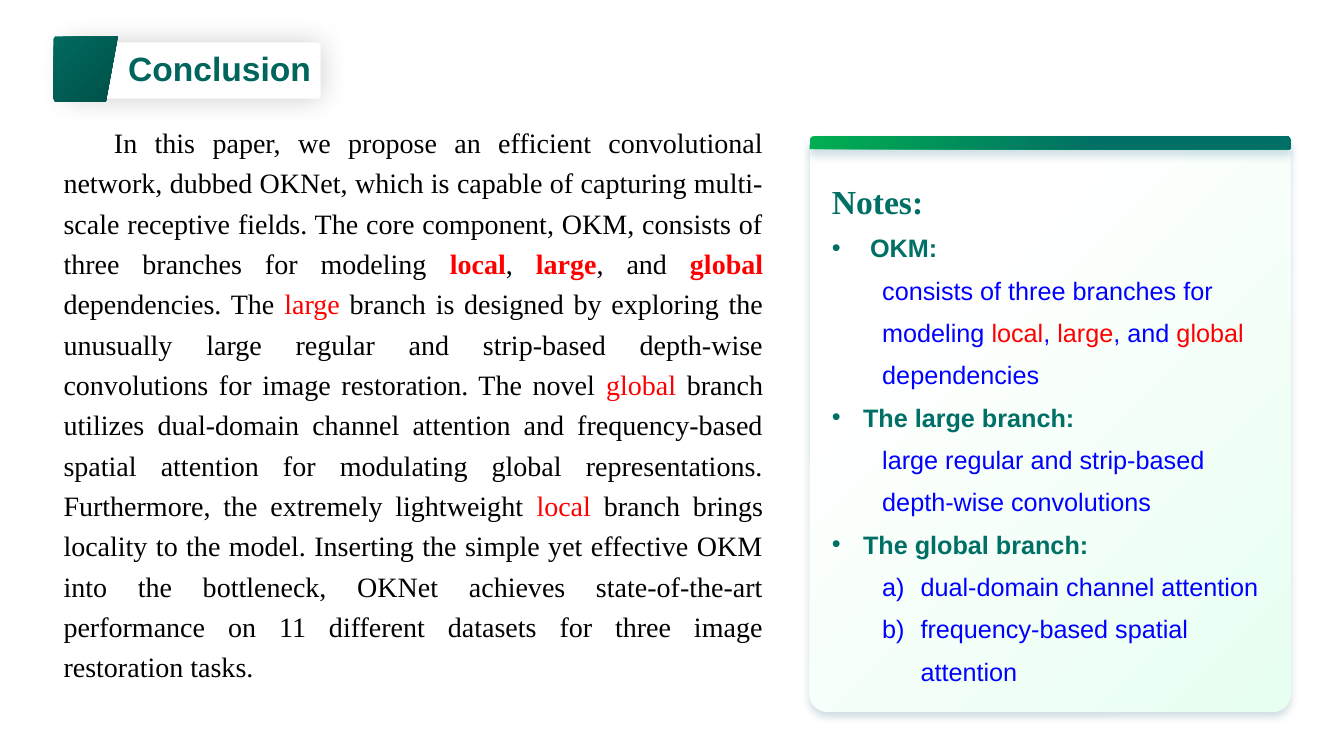
from lxml import etree
from pptx import Presentation
from pptx import util as u
from pptx.dml.color import RGBColor
from pptx.enum import shapes, text
from pptx.oxml.ns import qn

COLORS = {
    "black": "000000", "white": "FFFFFF", "red": "FF0000", "blue": "0000FF",
    "title": "00655C", "teal": "006F66", "tab": "006A60", "tab_dark": "005048",
    "green": "00B050", "mint": "E7FFF1",
    "card_shadow": "0F526C", "bar_shadow": "116584",
}
SERIF, SANS = "Times New Roman", "Arial"

# Content: each span is (text, color, bold)
TITLE = "Conclusion"
SUMMARY = [
    ("In this paper, we propose an efficient convolutional network, dubbed OKNet, "
     "which is capable of capturing multi-scale receptive fields. The core component, "
     "OKM, consists of three branches for modeling ", "black", False),
    ("local", "red", True), (", ", "black", False),
    ("large", "red", True), (", and ", "black", False),
    ("global", "red", True), (" dependencies. The ", "black", False),
    ("large", "red", False),
    (" branch is designed by exploring the unusually large regular and strip-based "
     "depth-wise convolutions for image restoration. The novel ", "black", False),
    ("global", "red", False),
    (" branch utilizes dual-domain channel attention and frequency-based spatial "
     "attention for modulating global representations. Furthermore, the extremely "
     "lightweight ", "black", False),
    ("local", "red", False),
    (" branch brings locality to the model. Inserting the simple yet effective OKM into "
     "the bottleneck, OKNet achieves state-of-the-art performance on 11 different "
     "datasets for three image restoration tasks.", "black", False),
]
# Notes: (kind, left margin, spans)
NOTES = [
    ("heading", 0, [("Notes:", "teal", True)]),
    ("bullet", 0.38, [("OKM:", "teal", True)]),
    ("detail", 0.5, [
        ("consists of three branches for modeling ", "blue", False),
        ("local", "red", False), (", ", "blue", False),
        ("large", "red", False), (", and ", "blue", False),
        ("global", "red", False), (" dependencies", "blue", False)]),
    ("bullet", 0.31, [("The large branch:", "teal", True)]),
    ("detail", 0.5, [
        ("large regular and strip-based depth-wise convolutions", "blue", False)]),
    ("bullet", 0.31, [("The global branch:", "teal", True)]),
    ("letter", 0.88, [("dual-domain channel attention", "blue", False)]),
    ("letter", 0.88, [("frequency-based spatial attention", "blue", False)]),
]
# Kind: (level, hanging indent, bullet tag, bullet attributes)
NOTE_KINDS = {
    "heading": (0, 0, "a:buNone", {}),
    "bullet": (0, -0.31, "a:buChar", {"char": "•"}),
    "detail": (1, 0, "a:buNone", {}),
    "letter": (2, -0.38, "a:buAutoNum", {"type": "alphaLcParenR"}),
}

# Geometry in inches
CARD_LEFT, CARD_TOP, CARD_WIDTH = 8.03, 1.35, 4.77
TAB_OUTLINE = [(0.55, 0.36), (1.17, 0.36), (1.05, 1.01), (0.55, 1.01),
               (0.54, 1.0), (0.53, 0.97), (0.53, 0.39), (0.54, 0.37)]


def rgb(name):
    return RGBColor.from_string(COLORS[name])


def paint(shape, stops):
    """Fill with one color name or with two (percent, color name) gradient stops."""
    shape.line.fill.background()
    shape.shadow.inherit = False
    if isinstance(stops, str):
        shape.fill.solid()
        shape.fill.fore_color.rgb = rgb(stops)
        return
    shape.fill.gradient()
    shape.fill.gradient_angle = 315
    for stop, (percent, name) in zip(shape.fill.gradient_stops, stops):
        stop.position = percent / 100
        stop.color.rgb = rgb(name)


def add_shadow(shape, name, blur, distance, degrees):
    effects = shape.element.spPr.find(qn("a:effectLst"))
    shadow = etree.SubElement(
        effects, qn("a:outerShdw"), blurRad=str(u.Pt(blur)), dist=str(u.Pt(distance)),
        dir=str(degrees * 60000), algn="ctr", rotWithShape="0")
    color = etree.SubElement(shadow, qn("a:srgbClr"), val=COLORS[name])
    etree.SubElement(color, qn("a:alpha"), val="20000")


def add_panel(page, kind, place, adjust, stops, shadow):
    shape = page.shapes.add_shape(kind, *map(u.Inches, place))
    shape.adjustments[0] = adjust
    paint(shape, stops)
    add_shadow(shape, *shadow)


def place_text(box, place):
    """Move a placeholder and bring it in front of the panels."""
    box.left, box.top, box.width, box.height = map(u.Inches, place)
    box.element.getparent().append(box.element)
    settings = {"word_wrap": True, "auto_size": text.MSO_AUTO_SIZE.NONE,
                "vertical_anchor": text.MSO_ANCHOR.TOP}
    for key, value in settings.items():
        setattr(box.text_frame, key, value)
    return box.text_frame


def write(para, spans, font, size, spacing, align, margin=0, indent=0,
          bullet="a:buNone", attributes=None):
    settings = {"line_spacing": spacing, "alignment": align,
                "space_before": u.Pt(0), "space_after": u.Pt(0)}
    for key, value in settings.items():
        setattr(para, key, value)
    props = para._p.get_or_add_pPr()
    props.set("marL", str(u.Inches(margin)))
    props.set("indent", str(u.Inches(indent)))
    etree.SubElement(props, qn(bullet), attributes or {})
    for words, color, bold in spans:
        span = para.add_run()
        span.text = words
        for key, value in {"name": font, "size": u.Pt(size), "bold": bold}.items():
            setattr(span.font, key, value)
        span.font.color.rgb = rgb(color)


def main():
    deck = Presentation()
    deck.slide_width, deck.slide_height = u.Inches(13.33), u.Inches(7.5)
    page = deck.slides.add_slide(deck.slide_layouts[3])
    title, summary, notes = list(page.placeholders)[:3]
    preset = shapes.MSO_SHAPE

    # Title plate and slanted tab
    add_panel(page, preset.ROUNDED_RECTANGLE, (0.66, 0.42, 2.52, 0.56), 0.057,
              "white", ("black", 20, 0, 0))
    points = [(u.Inches(x), u.Inches(y)) for x, y in TAB_OUTLINE]
    builder = page.shapes.build_freeform(*points[0])
    builder.add_line_segments(points[1:], close=True)
    paint(builder.convert_to_shape(), [(0, "tab"), (100, "tab_dark")])

    # Notes card and its top bar
    add_panel(page, preset.ROUNDED_RECTANGLE, (CARD_LEFT, CARD_TOP, CARD_WIDTH, 5.71),
              0.036, [(25, "white"), (100, "mint")], ("card_shadow", 6, 4, 90))
    add_panel(page, preset.ROUND_2_SAME_RECTANGLE, (CARD_LEFT, CARD_TOP, CARD_WIDTH, 0.13),
              0.349, [(0, "green"), (60, "teal")], ("bar_shadow", 6, 4, 90))

    # Title and summary
    left, justify = text.PP_ALIGN.LEFT, text.PP_ALIGN.JUSTIFY
    frame = place_text(title, (1.17, 0.43, 2.01, 0.5))
    frame.margin_right = 0
    write(frame.paragraphs[0], [(TITLE, "title", True)], SANS, 24, 1.0, left)
    frame = place_text(summary, (0.53, 1.13, 7.14, 5.72))
    write(frame.paragraphs[0], SUMMARY, SERIF, 20, 1.2, justify, indent=0.5)

    # Notes list
    frame = place_text(notes, (8.15, 1.58, 4.54, 5.28))
    for number, (kind, margin, spans) in enumerate(NOTES):
        para = frame.add_paragraph() if number else frame.paragraphs[0]
        level, indent, bullet, attributes = NOTE_KINDS[kind]
        para.level = level
        font, size = (SERIF, 24) if kind == "heading" else (SANS, 18)
        indent = -margin if kind == "bullet" else indent
        write(para, spans, font, size, 1.4, left, margin, indent, bullet, attributes)

    deck.save("out.pptx")


if __name__ == "__main__":
    main()
